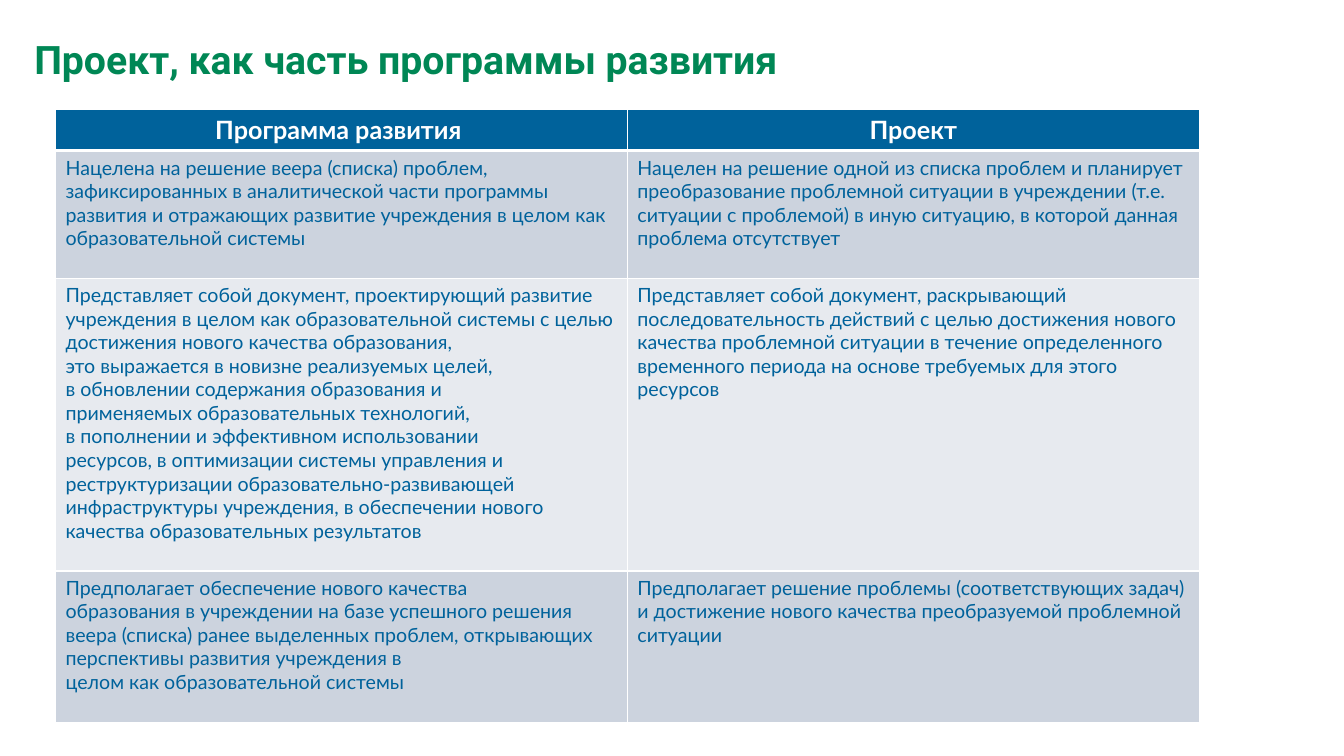
from lxml import etree
from pptx import Presentation
from pptx import util as u
from pptx.dml import color
from pptx.enum import text
from pptx.oxml import ns

HUES = {"white": "FFFFFF", "green": "008755", "blue": "00629B",
        "dark": "CCD3DE", "light": "E7EAEF"}
HEADS = ["Программа развития ", "Проект"]
BODY = [
    ["Нацелена на решение веера (списка) проблем, зафиксированных в аналитической "
     "части программы развития и отражающих развитие учреждения в целом как "
     "образовательной системы",
     "Нацелен на решение одной из списка проблем и планирует преобразование "
     "проблемной ситуации в учреждении (т.е. ситуации с проблемой) в иную ситуацию, "
     "в которой данная проблема отсутствует"],
    ["Представляет собой документ, проектирующий развитие учреждения в целом как "
     "образовательной системы с целью достижения нового качества образования,\n"
     "это выражается в новизне реализуемых целей,\n"
     "в обновлении содержания образования и\n"
     "применяемых образовательных технологий,\n"
     "в пополнении и эффективном использовании\n"
     "ресурсов, в оптимизации системы управления и\n"
     "реструктуризации образовательно-развивающей\n"
     "инфраструктуры учреждения, в обеспечении нового\n"
     "качества образовательных результатов",
     "Представляет собой документ, раскрывающий последовательность действий с целью "
     "достижения нового качества проблемной ситуации в течение определенного "
     "временного периода на основе требуемых для этого ресурсов"],
    ["Предполагает обеспечение нового качества\n"
     "образования в учреждении на базе успешного решения веера (списка) ранее "
     "выделенных проблем, открывающих перспективы развития учреждения в\n"
     "целом как образовательной системы",
     "Предполагает решение проблемы (соответствующих задач) и достижение нового "
     "качества преобразуемой проблемной ситуации"],
]


class Deck:
    def __init__(self, wide, high):
        self.prs = Presentation()
        self.prs.slide_width = u.Inches(wide)
        self.prs.slide_height = u.Inches(high)
        self.slide = self.prs.slides.add_slide(self.prs.slide_layouts[5])

    def across(self, share):
        return int(self.prs.slide_width * share / 100)

    def down(self, share):
        return int(self.prs.slide_height * share / 100)

    def hue(self, name):
        return color.RGBColor.from_string(HUES[name])

    def paint(self, fill, name):
        fill.solid()
        fill.fore_color.rgb = self.hue(name)

    def label(self, frame, words, face, size, name, bold, align):
        frame.text = words
        for para in frame.paragraphs:
            para.alignment = align
            font = para.font
            font.name, font.size, font.bold = face, u.Pt(size), bold
            font.color.rgb = self.hue(name)

    def title(self, words, left, top, wide, high):
        box = self.slide.shapes.title
        box.left, box.top = self.across(left), self.down(top)
        box.width, box.height = self.across(wide), self.down(high)
        self.paint(box.fill, "white")
        frame = box.text_frame
        frame.auto_size = text.MSO_AUTO_SIZE.NONE
        frame.vertical_anchor = text.MSO_ANCHOR.MIDDLE
        self.label(frame, words, "Roboto", 28, "green", True, text.PP_ALIGN.LEFT)

    def edge(self, cell, base):
        props = cell._tc.get_or_add_tcPr()
        for side, width in zip("LRTB", (1, 1, 1, base)):
            line = etree.SubElement(props, ns.qn(f"a:ln{side}"), w=str(u.Pt(width)))
            fill = etree.SubElement(line, ns.qn("a:solidFill"))
            etree.SubElement(fill, ns.qn("a:srgbClr"), val=HUES["white"])

    def table(self, data, left, top, wide, rows):
        count = len(data[0])
        grid = self.slide.shapes.add_table(
            len(data), count, self.across(left), self.down(top),
            self.across(wide), self.down(sum(rows))).table
        for col in grid.columns:
            col.width = self.across(wide / count)
        for i, (line, high) in enumerate(zip(data, rows)):
            grid.rows[i].height = self.down(high)
            for j, words in enumerate(line):
                self.cell(grid.cell(i, j), words, i)

    def cell(self, cell, words, row):
        head = row == 0
        self.edge(cell, 3 if head else 1)
        self.paint(cell.fill, "blue" if head else "dark" if row % 2 else "light")
        self.label(cell.text_frame, words, "Lato", 18 if head else 14,
                   "white" if head else "blue", head,
                   text.PP_ALIGN.CENTER if head else text.PP_ALIGN.LEFT)


def main():
    deck = Deck(13.33, 7.5)
    deck.title("Проект, как часть программы развития", 1.8, 2.13, 92.35, 11.33)
    deck.table([HEADS, *BODY], 4.13, 14.53, 85.1, [5.4, 16.9, 38.7, 20])
    deck.prs.save("out.pptx")


if __name__ == "__main__":
    main()
